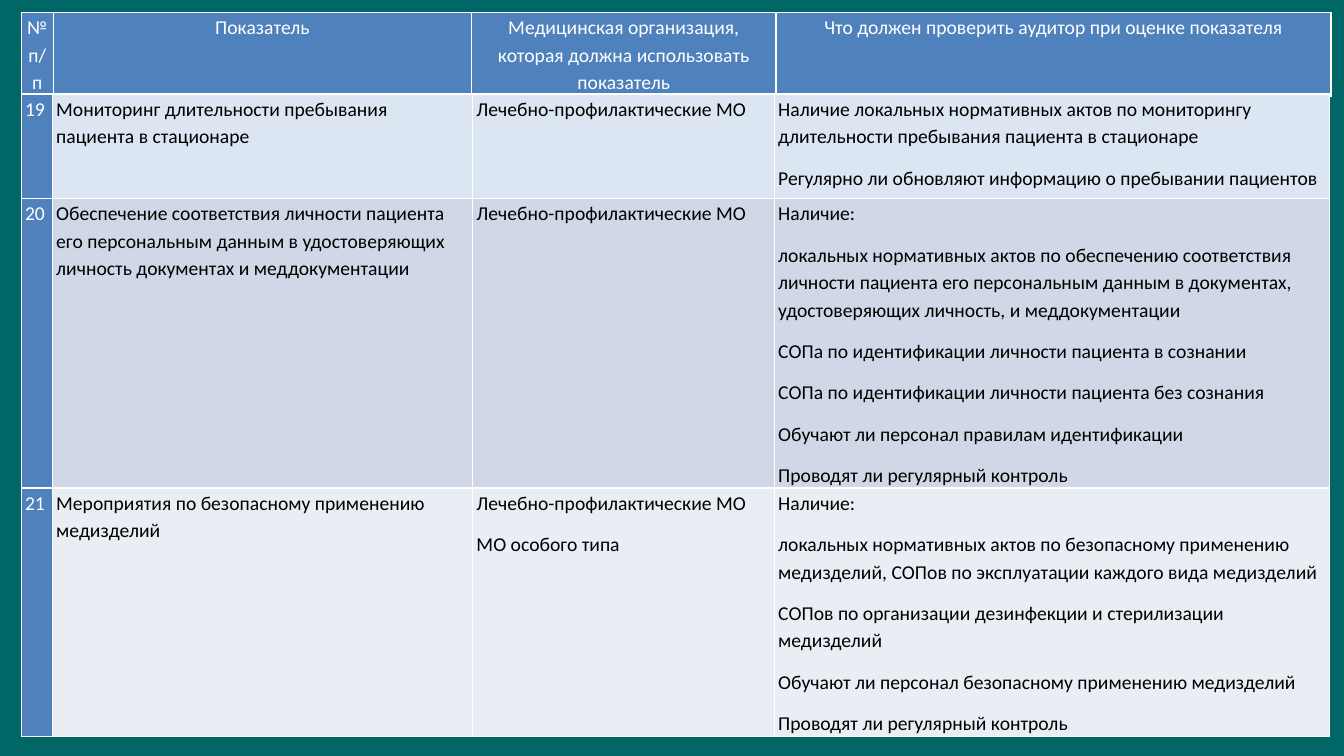
"""Build a slide with a table of audit indicators 19 to 21."""
from pptx import Presentation
from pptx.dml.color import RGBColor
from pptx.enum import text
from pptx.oxml import parse_xml
from pptx.oxml import ns
from pptx.util import Pt

TEAL = RGBColor(0x00, 0x66, 0x66)
BLUE = RGBColor(0x4F, 0x81, 0xBD)
WHITE = RGBColor(0xFF, 0xFF, 0xFF)
BLACK = RGBColor(0x00, 0x00, 0x00)
ROW_FILLS = [
    RGBColor(0xDC, 0xE6, 0xF2),
    RGBColor(0xD0, 0xD8, 0xE8),
    RGBColor(0xE9, 0xED, 0xF4),
]

HEADINGS = [
    ["№ п/п"],
    ["Показатель"],
    ["Медицинская организация, которая должна использовать показатель"],
    ["Что должен проверить аудитор при оценке показателя"],
]
INDICATORS = [
    [
        ["19"],
        ["Мониторинг длительности пребывания пациента в стационаре"],
        ["Лечебно-профилактические МО"],
        [
            "Наличие локальных нормативных актов по мониторингу "
            "длительности пребывания пациента в стационаре",
            "Регулярно ли обновляют информацию о пребывании пациентов",
        ],
    ],
    [
        ["20"],
        [
            "Обеспечение соответствия личности пациента его персональным данным "
            "в удостоверяющих личность документах и меддокументации"
        ],
        ["Лечебно-профилактические МО"],
        [
            "Наличие:",
            "локальных нормативных актов по обеспечению соответствия личности "
            "пациента его персональным данным в документах, "
            "удостоверяющих личность, и меддокументации",
            "СОПа по идентификации личности пациента в сознании",
            "СОПа по идентификации личности пациента без сознания",
            "Обучают ли персонал правилам идентификации",
            "Проводят ли регулярный контроль",
        ],
    ],
    [
        ["21"],
        ["Мероприятия по безопасному применению медизделий"],
        ["Лечебно-профилактические МО", "МО особого типа"],
        [
            "Наличие:",
            "локальных нормативных актов по безопасному применению медизделий, "
            "СОПов по эксплуатации каждого вида медизделий",
            "СОПов по организации дезинфекции и стерилизации медизделий",
            "Обучают ли персонал безопасному применению медизделий",
            "Проводят ли регулярный контроль",
        ],
    ],
]

LEFT = 15.1
HEADER_TOP, BODY_TOP = 9, 67.2
HEADER_WIDTHS = [23, 298.8, 217.4, 396.5]
BODY_WIDTHS = [22.3, 300.2, 215.5, 396.7]
HEADER_HEIGHTS = [58.2]
BODY_HEIGHTS = [74.6, 206.6, 177.4]


def add_borders(cell, bottom_width):
    """Draw white lines on the four sides of a cell."""
    properties = cell._tc.get_or_add_tcPr()
    for side, width in (("L", 1), ("R", 1), ("T", 1), ("B", bottom_width)):
        properties.append(parse_xml(
            f'<a:ln{side} {ns.nsdecls("a")} w="{Pt(width)}"><a:solidFill>'
            f'<a:srgbClr val="{WHITE}"/></a:solidFill></a:ln{side}>'))


def fill_cell(cell, lines, fill, color, alignment, margin, bottom_width):
    """Format a cell and write its paragraphs."""
    add_borders(cell, bottom_width)
    cell.fill.solid()
    cell.fill.fore_color.rgb = fill
    cell.margin_left = cell.margin_right = Pt(margin)
    cell.margin_top = cell.margin_bottom = 0
    frame = cell.text_frame
    for index, line in enumerate(lines):
        paragraph = frame.add_paragraph() if index else frame.paragraphs[0]
        paragraph.alignment = alignment
        paragraph.line_spacing = 1.15
        paragraph.space_after = Pt(10)
        run = paragraph.add_run()
        run.text = line
        run.font.name = "Calibri"
        run.font.size = Pt(14)
        run.font.color.rgb = color


def add_grid(slide, top, widths, heights):
    """Add an unstyled table with the given column widths and row heights."""
    table = slide.shapes.add_table(
        len(heights), len(widths), Pt(LEFT), Pt(top),
        Pt(sum(widths)), Pt(sum(heights))).table
    table.first_row = table.horz_banding = False
    for column, width in zip(table.columns, widths):
        column.width = Pt(width)
    for row, height in zip(table.rows, heights):
        row.height = Pt(height)
    return table


def main():
    """Create the slide and save it."""
    presentation = Presentation()
    presentation.slide_width, presentation.slide_height = Pt(960), Pt(540)
    slide = presentation.slides.add_slide(presentation.slide_layouts[6])
    slide.background.fill.solid()
    slide.background.fill.fore_color.rgb = TEAL

    header = add_grid(slide, HEADER_TOP, HEADER_WIDTHS, HEADER_HEIGHTS)
    for cell, lines in zip(header.rows[0].cells, HEADINGS):
        fill_cell(cell, lines, BLUE, WHITE, text.PP_ALIGN.CENTER, 2.2, 3)

    body = add_grid(slide, BODY_TOP, BODY_WIDTHS, BODY_HEIGHTS)
    for row, indicator, row_fill in zip(body.rows, INDICATORS, ROW_FILLS):
        for index, (cell, lines) in enumerate(zip(row.cells, indicator)):
            fill, color = (row_fill, BLACK) if index else (BLUE, WHITE)
            fill_cell(cell, lines, fill, color, text.PP_ALIGN.LEFT, 2.8, 1)

    presentation.save("out.pptx")


if __name__ == "__main__":
    main()
